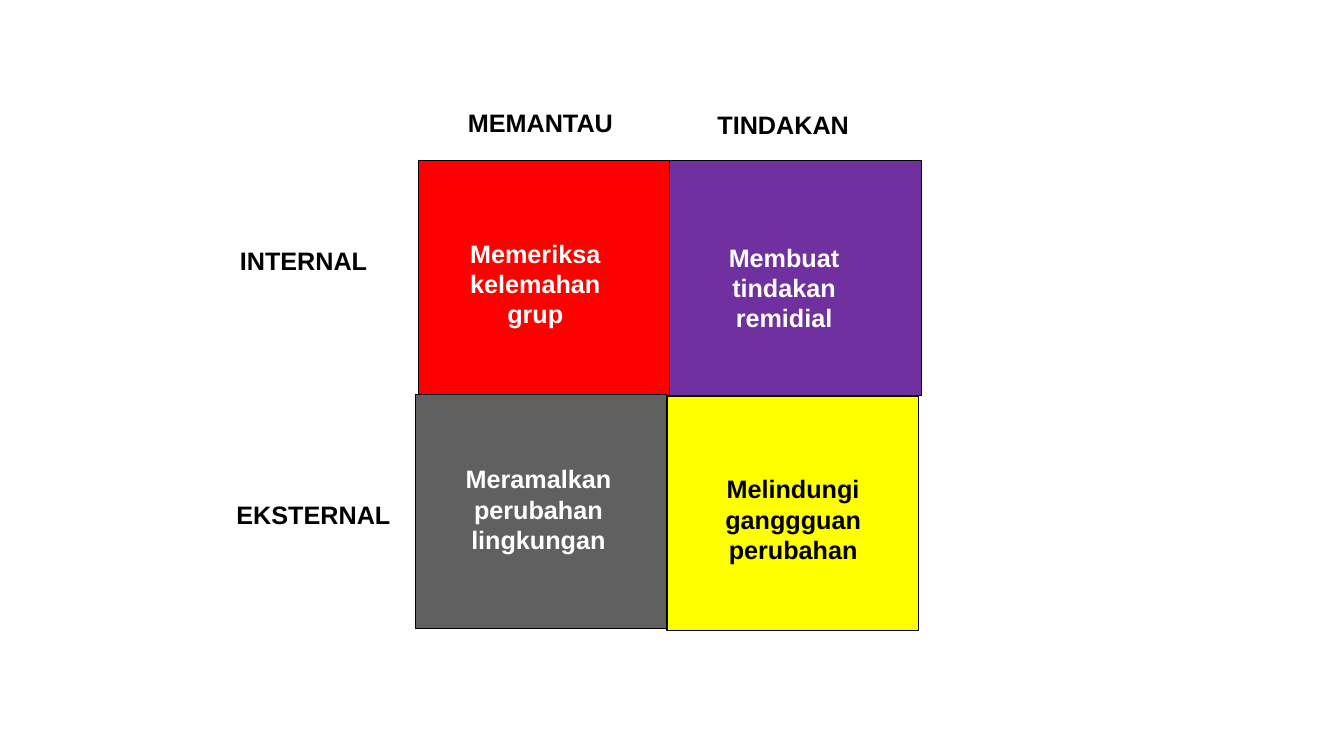
from pptx import Presentation
from pptx.dml.color import RGBColor
from pptx.enum.shapes import MSO_SHAPE
from pptx.enum.text import MSO_AUTO_SIZE, PP_ALIGN
from pptx.util import Cm, Pt

RECTANGLE = MSO_SHAPE.RECTANGLE
FIT_SHAPE = MSO_AUTO_SIZE.SHAPE_TO_FIT_TEXT
CENTER = PP_ALIGN.CENTER

BLACK = RGBColor(0x00, 0x00, 0x00)
WHITE = RGBColor(0xFF, 0xFF, 0xFF)
RED = RGBColor(0xFF, 0x00, 0x00)
PURPLE = RGBColor(0x70, 0x30, 0xA0)
GRAY = RGBColor(0x60, 0x60, 0x60)
YELLOW = RGBColor(0xFF, 0xFF, 0x00)

QUADRANT_WIDTH, QUADRANT_HEIGHT = 6.35, 5.92
TEXT_WIDTH, HEADING_HEIGHT, TASK_HEIGHT = 4.88, 1.02, 2.57

QUADRANTS = [
    (10.54, 4.04, RED),
    (16.87, 4.04, PURPLE),
    (10.46, 9.93, GRAY),
    (16.81, 9.98, YELLOW),
]
HEADINGS = [
    (11.18, 2.59, "MEMANTAU"),
    (17.3, 2.62, "TINDAKAN"),
    (5.21, 6.05, "INTERNAL"),
    (5.46, 12.45, "EKSTERNAL"),
]
TASKS = [
    (11.05, 5.87, "Memeriksa kelemahan grup", WHITE),
    (17.32, 5.97, "Membuat tindakan remidial", WHITE),
    (11.13, 11.56, "Meramalkan perubahan lingkungan", WHITE),
    (17.55, 11.81, "Melindungi ganggguan perubahan", BLACK),
]


def add_quadrant(slide, left, top, color):
    """Add one outlined rectangle of the matrix."""
    shape = slide.shapes.add_shape(
        RECTANGLE, Cm(left), Cm(top), Cm(QUADRANT_WIDTH), Cm(QUADRANT_HEIGHT)
    )
    shape.shadow.inherit = False
    shape.fill.solid()
    shape.fill.fore_color.rgb = color
    shape.line.color.rgb = BLACK
    shape.line.width = Pt(0.75)


def add_label(slide, left, top, height, text, color):
    """Add a bold, centred text box."""
    box = slide.shapes.add_textbox(Cm(left), Cm(top), Cm(TEXT_WIDTH), Cm(height))
    frame = box.text_frame
    frame.word_wrap = True
    frame.auto_size = FIT_SHAPE
    paragraph = frame.paragraphs[0]
    paragraph.alignment = CENTER
    run = paragraph.add_run()
    run.text = text
    run.font.name = "Arial"
    run.font.size = Pt(18)
    run.font.bold = True
    run.font.color.rgb = color


def main():
    """Build the slide with the two-by-two matrix and save it."""
    presentation = Presentation()
    presentation.slide_width = Cm(33.87)
    presentation.slide_height = Cm(19.05)
    slide = presentation.slides.add_slide(presentation.slide_layouts[6])
    for left, top, color in QUADRANTS:
        add_quadrant(slide, left, top, color)
    for left, top, text in HEADINGS:
        add_label(slide, left, top, HEADING_HEIGHT, text, BLACK)
    for left, top, text, color in TASKS:
        add_label(slide, left, top, TASK_HEIGHT, text, color)
    presentation.save("out.pptx")


if __name__ == "__main__":
    main()
